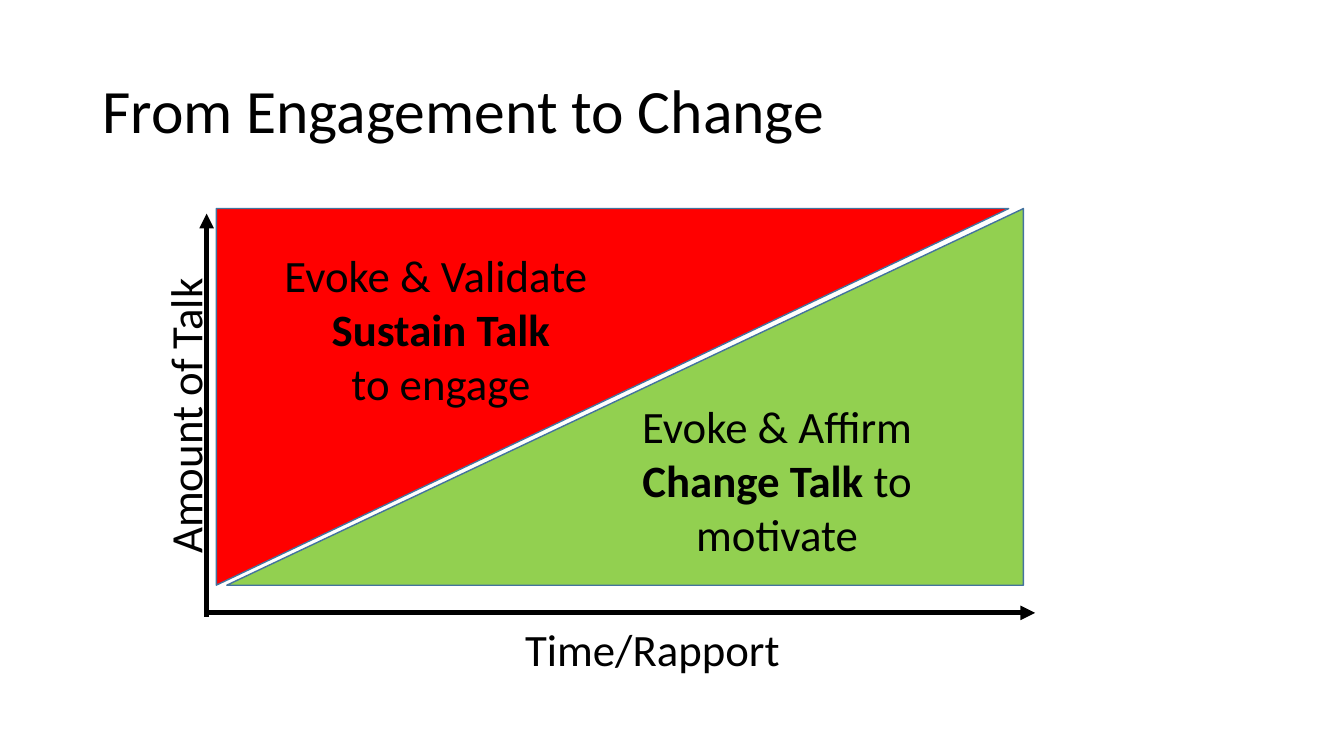
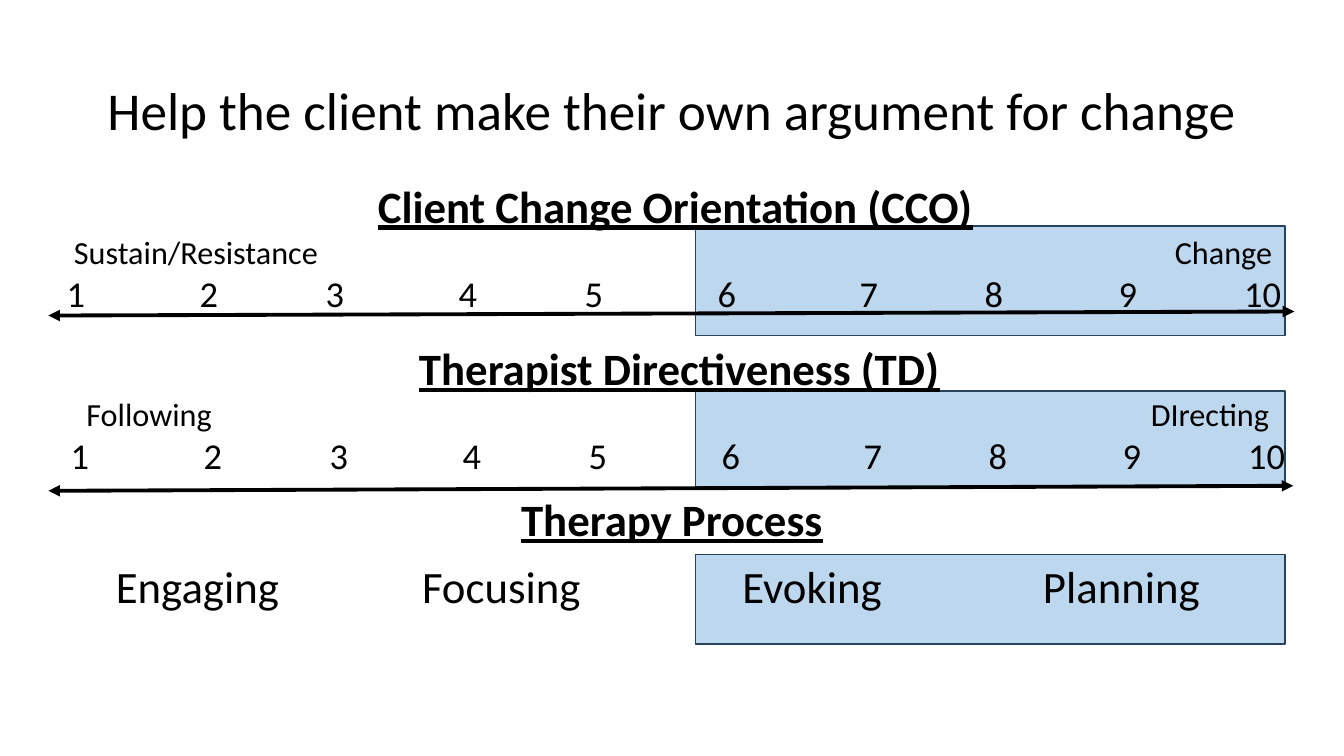
from dataclasses import dataclass

from pptx import Presentation
from pptx.dml.color import RGBColor
from pptx.enum import shapes, text
from pptx.oxml.ns import qn
from pptx.util import Pt
from lxml import etree


@dataclass(frozen=True)
class Theme:
    font: str = "Calibri"
    ink: str = "000000"
    red: str = "FF0000"
    green: str = "92D050"
    wedge_edge: str = "43739E"
    band: str = "BDD7EE"
    band_edge: str = "28445D"
    title: float = 44
    long_title: float = 38
    heading: float = 32
    number: float = 26
    label: float = 23
    edge: float = 1
    axis: float = 3.5
    scale: float = 2.75


@dataclass(frozen=True)
class Line:
    spans: tuple
    size: float
    align: str = "l"
    underline: bool = False
    stops: tuple = ()
    spacing: float = 1.0


THEME = Theme()
WIDTH, HEIGHT = 960, 540
TITLE_AREA = (66, 29, 828, 104)
ALIGN = {"l": text.PP_ALIGN.LEFT, "c": text.PP_ALIGN.CENTER}

WEDGES = [
    ((154.5, 149, 566, 269), 90, THEME.red),
    ((162, 149, 569, 269), 270, THEME.green),
]
AXES = [((147.6, 437.8), (739.4, 437.8)), ((147.6, 440.6), (147.6, 152.6))]
AXIS_LABELS = [
    ("Time/Rapport", (368, 440.6, 202, 46), 0),
    ("Amount of Talk", (18, 265.7, 228, 46), 270),
]
TALKS = [
    ((403.2, 281.5, 303.8, 124), [
        [("Evoke & Affirm", False)],
        [("Change Talk ", True), ("to motivate", False)],
    ]),
    ((162, 173.5, 306, 124), [
        [("Evoke & Validate ", False)],
        [("Sustain Talk", True)],
        [("to engage", False)],
    ]),
]

BAND_LEFT, BAND_WIDTH = 496.8, 421.2
BANDS = [(161.3, 78.5), (279.4, 68.4), (396, 64.1)]
SCALES = [
    ("Client Change Orientation (CCO)", ("Sustain/Resistance", "Change"),
     (14, 870), (31.7, 123.8), ((34.6, 225.4), (924.5, 222.5))),
    ("Therapist Directiveness (TD)", ("Following", "DIrecting"),
     (20, 865), (34.6, 239.8), ((34.6, 350.6), (923.8, 347))),
]
NUMBER_STOPS = (15.4, 110.4, 200.4, 295.4, 385.4, 480.4, 581.8, 671.1, 766.8, 863.1)
PROCESS = ["Engaging", "Focusing", "Evoking", "Planning"]
PROCESS_STOPS = (116, 333, 555, 776)


def colour(value):
    return RGBColor.from_string(value)


def add_tabs(para, stops):
    tabs = etree.SubElement(para._p.get_or_add_pPr(), qn("a:tabLst"))
    for position, kind in stops:
        etree.SubElement(tabs, qn("a:tab"), pos=str(int(Pt(position))), algn=kind)


def add_text(page, area, lines, rotation=0, anchor=text.MSO_ANCHOR.TOP):
    box = page.shapes.add_textbox(*map(Pt, area))
    box.rotation = rotation
    frame = box.text_frame
    frame.word_wrap = True
    frame.vertical_anchor = anchor
    for index, line in enumerate(lines):
        para = frame.add_paragraph() if index else frame.paragraphs[0]
        para.alignment = ALIGN[line.align]
        para.line_spacing = line.spacing
        if line.stops:
            add_tabs(para, line.stops)
        for wording, bold in line.spans:
            span = para.add_run()
            span.text = wording
            span.font.name = THEME.font
            span.font.size = Pt(line.size)
            span.font.color.rgb = colour(THEME.ink)
            span.font.bold = bold
            span.font.underline = line.underline


def add_title(page, wording, size, align):
    line = Line(((wording, False),), size, align, spacing=0.9)
    add_text(page, TITLE_AREA, [line], anchor=text.MSO_ANCHOR.MIDDLE)


def add_block(page, kind, area, fill, edge, rotation=0):
    left, top, width, height = area
    if rotation in (90, 270):
        left, top = left + (width - height) / 2, top + (height - width) / 2
        width, height = height, width
    block = page.shapes.add_shape(kind, *map(Pt, (left, top, width, height)))
    block.rotation = rotation
    block.shadow.inherit = False
    block.fill.solid()
    block.fill.fore_color.rgb = colour(fill)
    block.line.color.rgb = colour(edge)
    block.line.width = Pt(THEME.edge)


def add_arrow(page, start, end, weight, ends):
    arrow = page.shapes.add_connector(
        shapes.MSO_CONNECTOR.STRAIGHT, *map(Pt, start + end))
    arrow.line.color.rgb = colour(THEME.ink)
    arrow.line.width = Pt(weight)
    for name in ends:
        etree.SubElement(arrow.line._get_or_add_ln(), qn(name), type="triangle")
    etree.SubElement(arrow._element.spPr, qn("a:effectLst"))


def heading(wording):
    return Line(((wording, True),), THEME.heading, "c", underline=True)


def tabbed(words, size, stops):
    wording = "".join("\t" + word for word in words)
    return Line(((wording, False),), size, stops=tuple(stops))


def centred(stops):
    return [(stop, "ctr") for stop in stops]


def build_engagement(page):
    add_title(page, "From Engagement to Change", THEME.title, "l")
    for area, rotation, fill in WEDGES:
        add_block(page, shapes.MSO_SHAPE.RIGHT_TRIANGLE, area, fill,
                  THEME.wedge_edge, rotation)
    for start, end in AXES:
        add_arrow(page, start, end, THEME.axis, ["a:tailEnd"])
    for area, paragraphs in TALKS:
        add_text(page, area, [Line(tuple(spans), THEME.heading, "c")
                              for spans in paragraphs])
    for wording, area, rotation in AXIS_LABELS:
        add_text(page, area, [Line(((wording, False),), THEME.heading)], rotation)


def build_argument(page):
    for top, height in BANDS:
        add_block(page, shapes.MSO_SHAPE.RECTANGLE,
                  (BAND_LEFT, top, BAND_WIDTH, height), THEME.band, THEME.band_edge)
    add_title(page, "Help the client make their own argument for change",
              THEME.long_title, "c")
    numbers = tabbed(map(str, range(1, 11)), THEME.number, centred(NUMBER_STOPS))
    for name, labels, stops, corner, (start, end) in SCALES:
        poles = tabbed(labels, THEME.label, zip(stops, ("l", "r")))
        add_text(page, corner + (901.4, 105), [heading(name), poles, numbers])
        add_arrow(page, start, end, THEME.scale, ["a:headEnd", "a:tailEnd"])
    add_text(page, (18, 395.3, 905.8, 46),
             [tabbed(PROCESS, THEME.heading, centred(PROCESS_STOPS))])
    add_text(page, (200.9, 347.8, 558, 46), [heading("Therapy Process")])


def main():
    deck = Presentation()
    deck.slide_width, deck.slide_height = Pt(WIDTH), Pt(HEIGHT)
    for build in (build_engagement, build_argument):
        build(deck.slides.add_slide(deck.slide_layouts[6]))
    deck.save("out.pptx")


if __name__ == "__main__":
    main()
